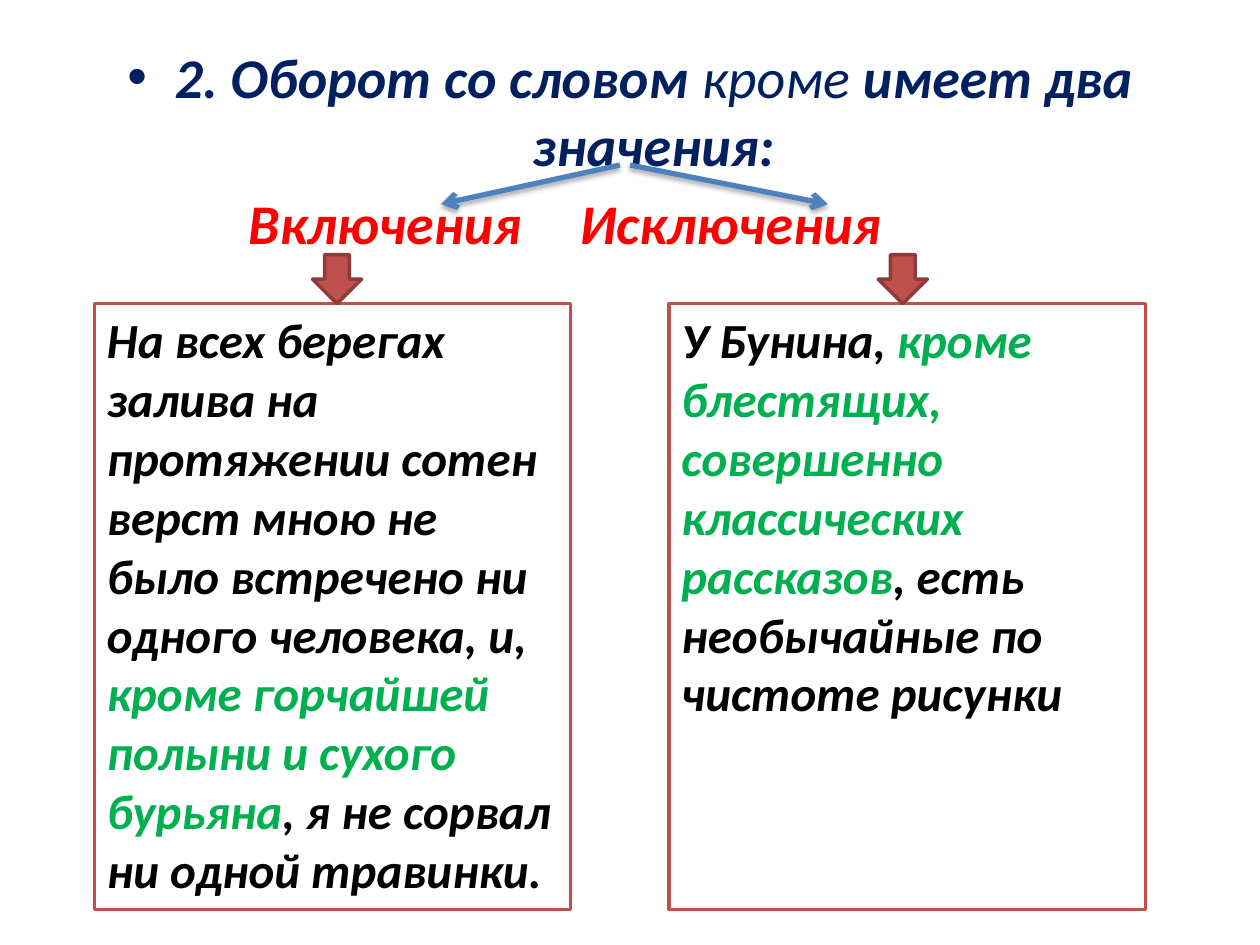
"""Build a slide on the two meanings of a Russian phrase."""
from lxml import etree
from pptx import Presentation
from pptx.dml.color import RGBColor
from pptx.enum import shapes, text
from pptx.oxml import parse_xml
from pptx.oxml.ns import nsdecls, qn
from pptx.util import Inches, Pt

HUES = {"navy": "002060", "red": "FF0000", "black": "000000", "green": "00B050",
        "white": "FFFFFF", "brick": "C0504D", "dark": "8E3B39", "blue": "4F81BD"}

HEAD = [("2. Оборот со словом ", "navy", True), ("кроме ", "navy", False),
        ("имеет два значения:", "navy", True)]
KINDS = [("Включения\tИсключения", "red", True)]
CARDS = [
    {"left": 0.75, "mark": 2.48, "tip": 3.5, "start": 4.92, "runs": [
        ("На всех берегах залива на протяжении сотен верст мною не было "
         "встречено ни одного человека, и, ", "black", True),
        ("кроме горчайшей полыни и сухого бурьяна", "green", True),
        (", я не сорвал ни одной травинки.", "black", True)]},
    {"left": 5.31, "mark": 6.97, "tip": 6.57, "start": 5, "runs": [
        ("У Бунина, ", "black", True),
        ("кроме блестящих, совершенно классических рассказов", "green", True),
        (", есть необычайные по чистоте рисунки", "black", True)]},
]
TOP, WIDE, HIGH, MARK = 2.41, 3.78, 4.81, 0.39
SHADE = (f'<a:effectLst {nsdecls("a")}><a:outerShdw blurRad="{Pt(3.1)}" dist="{Pt(1.8)}" '
         'dir="5400000" rotWithShape="0"><a:srgbClr val="000000"><a:alpha val="35000"/>'
         '</a:srgbClr></a:outerShdw></a:effectLst>')


def hue(name):
    return RGBColor.from_string(HUES[name])


def write(para, runs, size=28, align=text.PP_ALIGN.LEFT):
    para.alignment = align
    for words, color, bold in runs:
        run = para.add_run()
        run.text = words
        font = run.font
        font.name, font.size = "Calibri", Pt(size)
        font.bold, font.italic = bold, True
        font.color.rgb = hue(color)


def block(slide, kind, box, fill, line):
    shape = slide.shapes.add_shape(kind, *map(Inches, box))
    shape.shadow.inherit = False
    shape.fill.solid()
    shape.fill.fore_color.rgb = hue(fill)
    shape.line.color.rgb = hue(line)
    shape.line.width = Pt(2)
    return shape


def arrow(slide, start, end):
    link = slide.shapes.add_connector(
        shapes.MSO_CONNECTOR.STRAIGHT, *map(Inches, start + end))
    link.line.color.rgb = hue("blue")
    link.line.width = Pt(3)
    etree.SubElement(link.line._get_or_add_ln(), qn("a:tailEnd"), type="arrow")
    link._element.spPr.append(parse_xml(SHADE))


def heading(slide):
    body = slide.placeholders[1]
    body.left, body.top, body.width, body.height = map(Inches, (0.5, 0.29, 9, 6.41))
    frame = body.text_frame
    write(frame.paragraphs[0], HEAD, size=32, align=text.PP_ALIGN.CENTER)
    para = frame.add_paragraph()
    write(para, KINDS, size=32)
    props = para._p.get_or_add_pPr()
    props.set("marL", "0")
    props.set("indent", str(Inches(1.37)))
    etree.SubElement(props, qn("a:buNone"))
    tabs = etree.SubElement(props, qn("a:tabLst"))
    etree.SubElement(tabs, qn("a:tab"), pos=str(Inches(5.04)), algn="l")


def main():
    deck = Presentation()
    deck.slide_width, deck.slide_height = Inches(10), Inches(7.5)
    slide = deck.slides.add_slide(deck.slide_layouts[1])
    title = slide.shapes.title._element
    title.getparent().remove(title)
    heading(slide)
    for card in CARDS:
        box = block(slide, shapes.MSO_SHAPE.RECTANGLE,
                    (card["left"], TOP, WIDE, HIGH), "white", "brick")
        frame = box.text_frame
        frame.word_wrap = True
        frame.vertical_anchor = text.MSO_ANCHOR.TOP
        frame.auto_size = text.MSO_AUTO_SIZE.SHAPE_TO_FIT_TEXT
        write(frame.paragraphs[0], card["runs"])
    for card in CARDS:
        block(slide, shapes.MSO_SHAPE.DOWN_ARROW,
              (card["mark"], TOP - MARK, MARK, MARK), "brick", "dark")
        arrow(slide, (card["start"], 1.31), (card["tip"], 1.62))
    deck.save("out.pptx")


if __name__ == "__main__":
    main()
